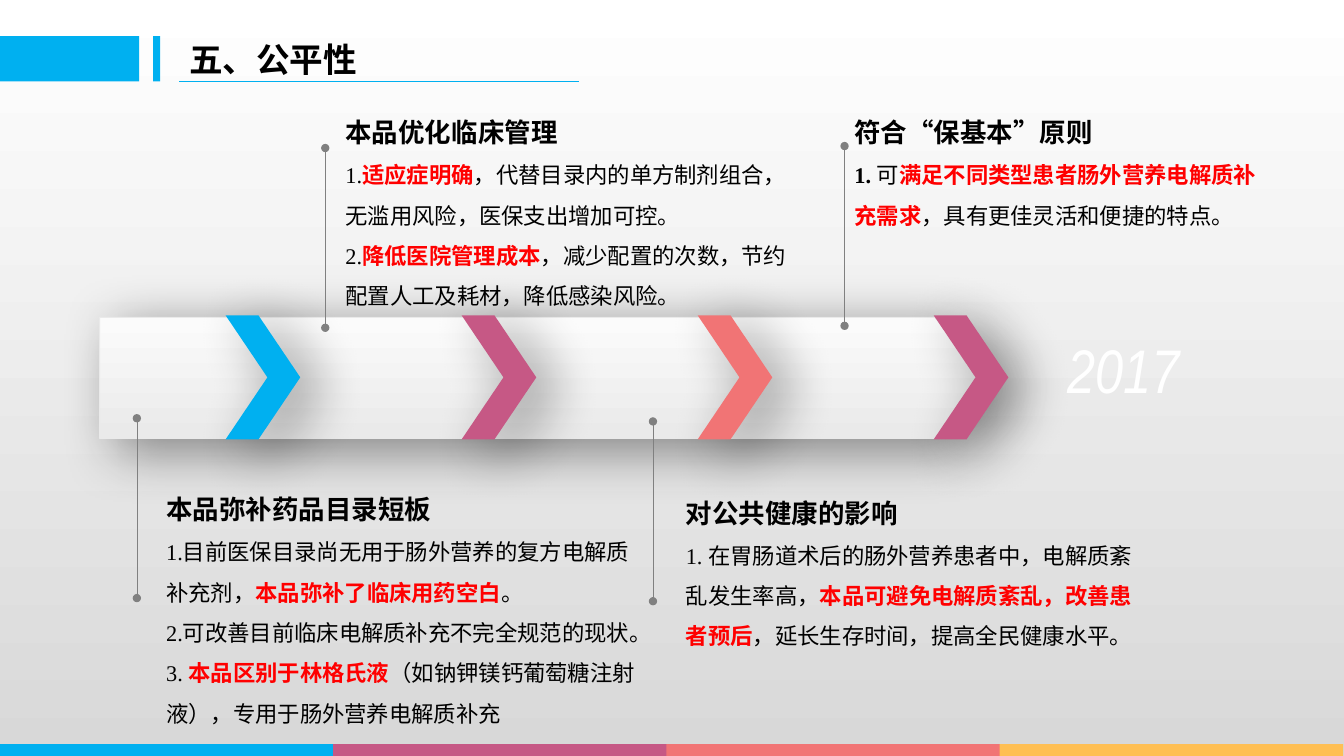
"""Build the fairness slide: an arrow timeline with four notes."""
from dataclasses import dataclass

from lxml import etree
from pptx import Presentation
from pptx.dml.color import RGBColor
from pptx.enum.lang import MSO_LANGUAGE_ID
from pptx.enum.shapes import MSO_CONNECTOR, MSO_SHAPE
from pptx.enum.text import MSO_ANCHOR
from pptx.oxml.ns import qn
from pptx.shapes.autoshape import Shape
from pptx.shapes.connector import Connector
from pptx.slide import Slide
from pptx.text.text import TextFrame
from pptx.util import Cm, Pt

RECT = MSO_SHAPE.RECTANGLE
PLATE = MSO_SHAPE.PENTAGON
CHEVRON = MSO_SHAPE.CHEVRON
STRAIGHT = MSO_CONNECTOR.STRAIGHT
MIDDLE = MSO_ANCHOR.MIDDLE
CHINESE = MSO_LANGUAGE_ID.SIMPLIFIED_CHINESE

BLACK = RGBColor(0, 0, 0)
WHITE = RGBColor(255, 255, 255)
RED = RGBColor(255, 0, 0)
BLUE = RGBColor(0x00, 0xB0, 0xF0)
PLUM = RGBColor(0xC6, 0x58, 0x85)
CORAL = RGBColor(0xF1, 0x74, 0x75)
AMBER = RGBColor(0xFF, 0xBF, 0x53)
GREY = RGBColor(0x80, 0x80, 0x80)
SILVER = RGBColor(0xD8, 0xD8, 0xD8)
PALE = RGBColor(0xFB, 0xFB, 0xFB)
MIST = RGBColor(0xEA, 0xEA, 0xEA)

SERIF = "Times New Roman"
NARROW = "Arial Narrow"
SANS = "Noto Sans CJK SC"


@dataclass(frozen=True)
class Box:
    """Place and size in centimetres."""
    left: float
    top: float
    width: float
    height: float


@dataclass(frozen=True)
class Span:
    """A stretch of text in one style."""
    text: str
    color: RGBColor = BLACK
    bold: bool = False


@dataclass(frozen=True)
class Note:
    """A headed text with its pin line."""
    box: Box
    pin: tuple[float, float]
    font: str
    head: str
    body: list[list[Span]]


def key(text: str) -> Span:
    """Return a red bold span."""
    return Span(text, RED, True)


NOTES = [
    Note(Box(3.94, 11.91, 12.37, 6.6), (3.45, 10.54), SERIF, "本品弥补药品目录短板", [
        [Span("1.目前医保目录尚无用于肠外营养的复方电解质补充剂，"),
         key("本品弥补了临床用药空白"), Span("。")],
        [Span("2.可改善目前临床电解质补充不完全规范的现状。")],
        [Span("3. "), key("本品区别于林格氏液"),
         Span("（如钠钾镁钙葡萄糖注射液），专用于肠外营养电解质补充")]]),
    Note(Box(8.46, 2.41, 11.84, 5.59), (8.2, 3.73), NARROW, "本品优化临床管理", [
        [Span("1."), key("适应症明确"),
         Span("，代替目录内的单方制剂组合，无滥用风险，医保支出增加可控。")],
        [Span("2."), key("降低医院管理成本"),
         Span("，减少配置的次数，节约配置人工及耗材，降低感染风险。")]]),
    Note(Box(17.04, 11.99, 12.27, 4.55), (16.46, 10.62), SERIF, "对公共健康的影响", [
        [Span("1. 在胃肠道术后的肠外营养患者中，电解质紊乱发生率高，"),
         key("本品可避免电解质紊乱，改善患者预后"),
         Span("，延长生存时间，提高全民健康水平。")]]),
    Note(Box(21.29, 2.41, 10.92, 3.53), (21.29, 3.68), SANS, "符合“保基本”原则", [
        [Span("1. ", bold=True), Span("可"),
         key("满足不同类型患者肠外营养电解质补充需求"),
         Span("，具有更佳灵活和便捷的特点。")]]),
]


def add_part(slide: Slide, kind: MSO_SHAPE, box: Box, color: RGBColor) -> Shape:
    """Add a plain filled shape."""
    part = slide.shapes.add_shape(
        kind, Cm(box.left), Cm(box.top), Cm(box.width), Cm(box.height))
    part.shadow.inherit = False
    part.fill.solid()
    part.fill.fore_color.rgb = color
    part.line.fill.background()
    return part


def add_shade(part: Shape) -> None:
    """Give a shape a soft outer shadow."""
    effects = part._element.spPr.find(qn("a:effectLst"))
    shade = etree.SubElement(
        effects, qn("a:outerShdw"), blurRad=str(Pt(40)), dist=str(Pt(14)),
        dir=str(31 * 60000), algn="tl", rotWithShape="0")
    tint = etree.SubElement(shade, qn("a:srgbClr"), val=str(BLACK))
    etree.SubElement(tint, qn("a:alpha"), val="43000")


def add_line(slide: Slide, start: tuple[float, float], end: tuple[float, float],
             color: RGBColor, width: float) -> Connector:
    """Add a straight line without shadow."""
    line = slide.shapes.add_connector(
        STRAIGHT, Cm(start[0]), Cm(start[1]), Cm(end[0]), Cm(end[1]))
    line.line.color.rgb = color
    line.line.width = Pt(width)
    etree.SubElement(line._element.spPr, qn("a:effectLst"))
    return line


def add_frame(slide: Slide, box: Box) -> TextFrame:
    """Add a wrapping text box."""
    frame = slide.shapes.add_textbox(
        Cm(box.left), Cm(box.top), Cm(box.width), Cm(box.height)).text_frame
    frame.word_wrap = True
    return frame


def add_text(frame: TextFrame, spans: list[Span], font: str, size: float,
             first: bool = False, space: float = 1.5, italic: bool = False) -> None:
    """Write one paragraph of styled spans."""
    para = frame.paragraphs[0] if first else frame.add_paragraph()
    para.line_spacing = space
    para.font.name = font
    para.font.size = Pt(size)
    para.font.italic = italic
    for span in spans:
        run = para.add_run()
        run.text = span.text
        run.font.bold = span.bold
        run.font.color.rgb = span.color
        run.font.language_id = CHINESE
        etree.SubElement(run._r.get_or_add_rPr(), qn("a:ea"), typeface=SANS)


def add_note(slide: Slide, note: Note) -> None:
    """Add a pin line and its text."""
    left, top = note.pin
    pin = add_line(slide, note.pin, (left, top + 4.53), GREY, 0.5)
    stroke = pin._element.spPr.find(qn("a:ln"))
    for end in ("a:headEnd", "a:tailEnd"):
        etree.SubElement(stroke, qn(end), type="oval")
    frame = add_frame(slide, note.box)
    add_text(frame, [Span(note.head, bold=True)], note.font, 18.9, first=True)
    for spans in note.body:
        add_text(frame, spans, SERIF, 16)


def set_blend(fill, top: RGBColor, base: RGBColor) -> None:
    """Set a gradient that runs downwards."""
    fill.gradient()
    fill.gradient_angle = 270
    for stop, color, place in zip(fill.gradient_stops, (top, base), (0, 1)):
        stop.color.rgb = color
        stop.position = place


def main() -> None:
    """Draw the slide and save it."""
    deck = Presentation()
    deck.slide_width, deck.slide_height = Cm(33.88), Cm(19.05)
    slide = deck.slides.add_slide(deck.slide_layouts[6])
    set_blend(slide.background.fill, WHITE, SILVER)

    for left, width in ((3.86, 0.18), (-0.05, 3.56)):
        add_part(slide, RECT, Box(left, 0.91, width, 1.14), BLUE)
    add_line(slide, (4.52, 2.06), (14.6, 2.06), BLUE, 0.75)
    for i, color in enumerate((BLUE, PLUM, CORAL, AMBER)):
        add_part(slide, RECT, Box(8.4 * i, 18.75, 8.66, 0.33), color)

    plate = add_part(slide, PLATE, Box(2.51, 8, 22.28, 3.05), MIST)
    plate.adjustments[0] = 0.4
    set_blend(plate.fill, PALE, MIST)
    plate.line.color.rgb = MIST
    plate.line.width = Pt(0.75)
    add_shade(plate)
    for i, color in enumerate((BLUE, PLUM, CORAL, PLUM)):
        mark = add_part(slide, CHEVRON, Box(5.69 + 5.95 * i, 7.95, 1.88, 3.12), color)
        mark.adjustments[0] = 0.56
        add_shade(mark)

    for note in NOTES:
        add_note(slide, note)
    year = add_frame(slide, Box(26.65, 8.2, 3.8, 2.2))
    year.vertical_anchor = MIDDLE
    add_text(year, [Span("2017", WHITE)], NARROW, 44, True, 1, True)
    title = add_frame(slide, Box(4.52, 0.91, 10.08, 1.14))
    title.vertical_anchor = MIDDLE
    add_text(title, [Span("五、公平性", bold=True)], SANS, 24, True, 1)
    deck.save("out.pptx")


if __name__ == "__main__":
    main()
